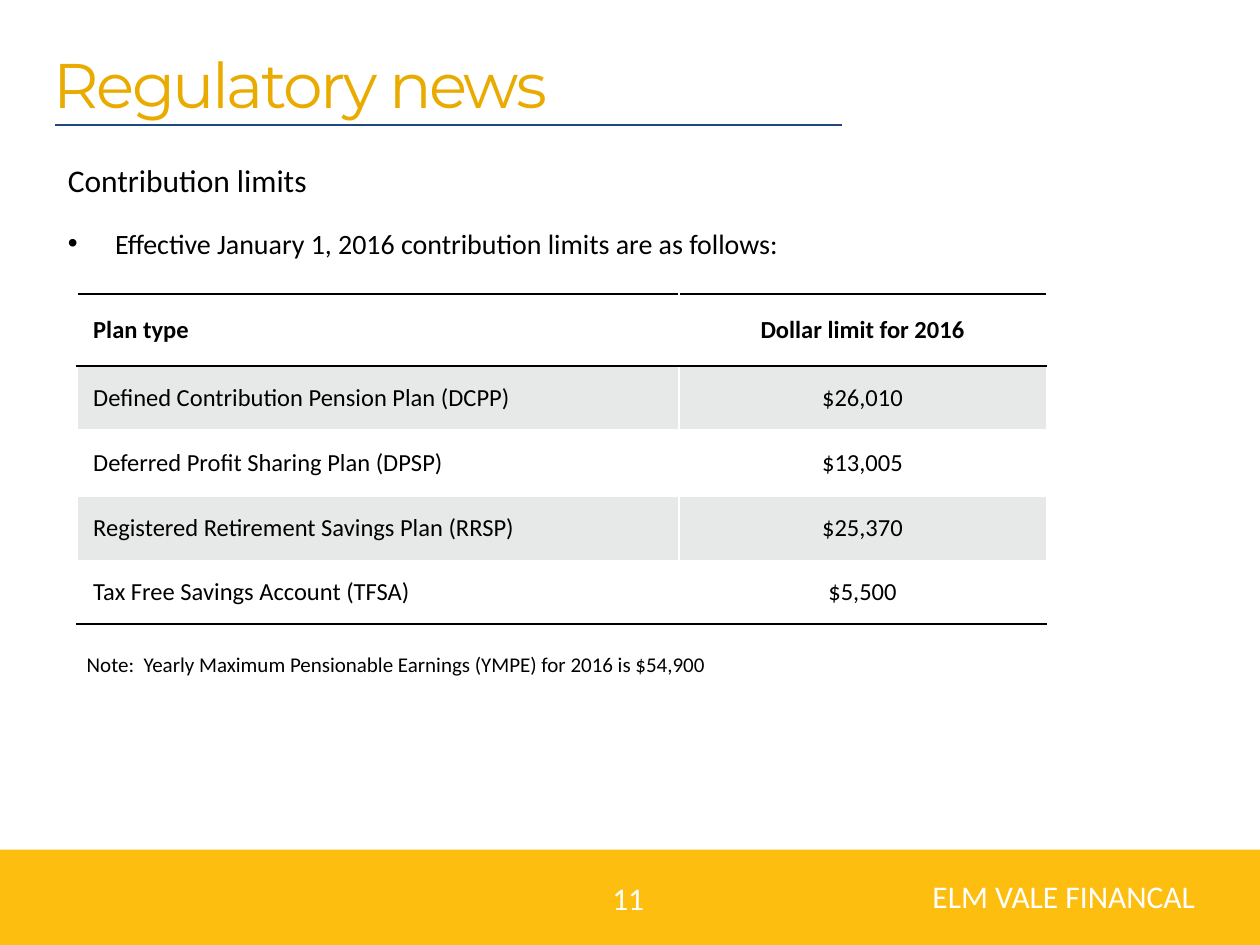
from dataclasses import dataclass
from typing import Optional

from lxml.etree import SubElement
from pptx import Presentation
from pptx.dml.color import RGBColor
from pptx.enum.shapes import MSO_CONNECTOR, MSO_SHAPE
from pptx.enum.text import MSO_ANCHOR, PP_ALIGN
from pptx.oxml.ns import qn
from pptx.util import Pt


@dataclass(frozen=True)
class Theme:
    gold: str = "FEBE10"
    title: str = "EAAB00"
    rule: str = "1F497D"
    text: str = "000000"
    white: str = "FFFFFF"
    band: str = "E7E8E8"
    font: str = "Calibri"
    title_font: str = "Montserrat"
    title_size: float = 36
    large: float = 18
    body: float = 16
    cell: float = 14
    note: float = 12


T = Theme()


@dataclass(frozen=True)
class Label:
    lines: tuple[str, ...]
    left: float
    top: float
    width: float
    height: float
    size: float
    color: str = T.text
    font: str = T.font
    align: PP_ALIGN = PP_ALIGN.LEFT
    right_inset: float = 7.2


@dataclass(frozen=True)
class PlanRow:
    plan: str
    limit: str
    height: float


def rgb(color: str) -> RGBColor:
    return RGBColor.from_string(color)


def style_paragraph(p, size: float, color: str, font: str = T.font,
                    align: PP_ALIGN = PP_ALIGN.LEFT, bold: bool = False) -> None:
    p.alignment = align
    for r in p.runs:
        r.font.name, r.font.size, r.font.bold = font, Pt(size), bold
        r.font.color.rgb = rgb(color)


def add_label(s, label: Label):
    tb = s.shapes.add_textbox(Pt(label.left), Pt(label.top), Pt(label.width), Pt(label.height))
    tf = tb.text_frame
    tf.word_wrap = True
    tf.margin_right = Pt(label.right_inset)
    tf.text = "\n".join(label.lines)
    for p in tf.paragraphs:
        style_paragraph(p, label.size, label.color, label.font, label.align)
    return tf


def add_bullet(p, indent: float) -> None:
    pPr = p._p.get_or_add_pPr()
    pPr.set("marL", str(Pt(indent)))
    pPr.set("indent", str(-Pt(indent)))
    SubElement(pPr, qn("a:buFont"), typeface="Arial")
    SubElement(pPr, qn("a:buChar"), char="•")


def set_borders(cell, top: str, bottom: str) -> None:
    tcPr = cell._tc.get_or_add_tcPr()
    edges = {"a:lnL": T.white, "a:lnR": T.white, "a:lnT": top, "a:lnB": bottom}
    for index, (tag, color) in enumerate(edges.items()):
        ln = SubElement(tcPr, qn(tag), w=str(Pt(1)))
        SubElement(SubElement(ln, qn("a:solidFill")), qn("a:srgbClr"), val=color)
        tcPr.insert(index, ln)  # borders come before the fill


def fill_cell(cell, text: str, align: PP_ALIGN, bold: bool, fill: Optional[str]) -> None:
    cell.text_frame.text = text
    style_paragraph(cell.text_frame.paragraphs[0], T.cell, T.text, align=align, bold=bold)
    cell.vertical_anchor = MSO_ANCHOR.MIDDLE
    cell.margin_left = cell.margin_right = Pt(9.36)
    cell.margin_top = cell.margin_bottom = Pt(2.88)
    if fill:
        cell.fill.solid()
        cell.fill.fore_color.rgb = rgb(fill)
    else:
        cell.fill.background()


def add_limits_table(s, rows: list[PlanRow], left: float, top: float,
                     widths: tuple[float, float]) -> None:
    height = sum(row.height for row in rows)
    table = s.shapes.add_table(len(rows), len(widths), Pt(left), Pt(top),
                               Pt(sum(widths)), Pt(height)).table
    for column, width in zip(table.columns, widths):
        column.width = Pt(width)
    last = len(rows) - 1
    for i, row in enumerate(rows):
        table.rows[i].height = Pt(row.height)
        for j, (text, align) in enumerate(((row.plan, PP_ALIGN.LEFT),
                                           (row.limit, PP_ALIGN.CENTER))):
            cell = table.cell(i, j)
            fill_cell(cell, text, align, bold=i == 0, fill=T.band if i % 2 else None)
            set_borders(cell, top=T.text if i <= 1 else T.white,
                        bottom=T.text if i in (0, last) else T.white)


def add_rule(s, left: float, right: float, y: float) -> None:
    line = s.shapes.add_connector(MSO_CONNECTOR.STRAIGHT, Pt(left), Pt(y), Pt(right), Pt(y))
    line.line.color.rgb = rgb(T.rule)
    line.line.width = Pt(0.75)
    SubElement(line._element.spPr, qn("a:effectLst"))


def main() -> None:
    prs = Presentation()
    prs.slide_width, prs.slide_height = Pt(720), Pt(540)
    s = prs.slides.add_slide(prs.slide_layouts[6])

    # Footer band
    band = s.shapes.add_shape(MSO_SHAPE.RECTANGLE, 0, Pt(485.5), Pt(720), Pt(54.5))
    band.shadow.inherit = False
    band.fill.solid()
    band.fill.fore_color.rgb = rgb(T.gold)
    band.line.fill.background()
    add_label(s, Label(("ELM VALE FINANCAL",), 405.4, 497.5, 294.5, 29, T.large, T.white,
                       align=PP_ALIGN.RIGHT, right_inset=17))

    # Title
    title = add_label(s, Label(("Regulatory news",), 23.76, 22.32, 771, 51,
                               T.title_size, T.title, T.title_font))
    title.paragraphs[0].runs[0].font._element.set("spc", "-150")
    add_rule(s, 31.68, 481, 71.5)

    # Introduction
    intro = add_label(s, Label(("Contribution limits",
                                "Effective January 1, 2016 contribution limits are as follows:"),
                               31.68, 88.56, 607, 85, T.large))
    bullet = intro.paragraphs[1]
    bullet.runs[0].font.size = Pt(T.body)
    bullet.space_before = Pt(15.5)
    add_bullet(bullet, 27)

    # Contribution limits
    add_limits_table(s, [
        PlanRow("Plan type", "Dollar limit for 2016", 41.2),
        PlanRow("Defined Contribution Pension Plan (DCPP)", "$26,010", 36.5),
        PlanRow("Deferred Profit Sharing Plan (DPSP)", "$13,005", 38),
        PlanRow("Registered Retirement Savings Plan (RRSP)", "$25,370", 36.5),
        PlanRow("Tax Free Savings Account (TFSA)", "$5,500", 36.5),
    ], 43.92, 168, (344, 210))

    # Note and page number
    add_label(s, Label(("Note:\u00a0 Yearly Maximum Pensionable Earnings (YMPE) for 2016 is $54,900"
                        .replace("\u00a0", " "),), 42.48, 368.64, 632, 22, T.note))
    add_label(s, Label(("11",), 275, 499, 168, 29, T.large, T.white, align=PP_ALIGN.CENTER))

    prs.save("out.pptx")


if __name__ == "__main__":
    main()
